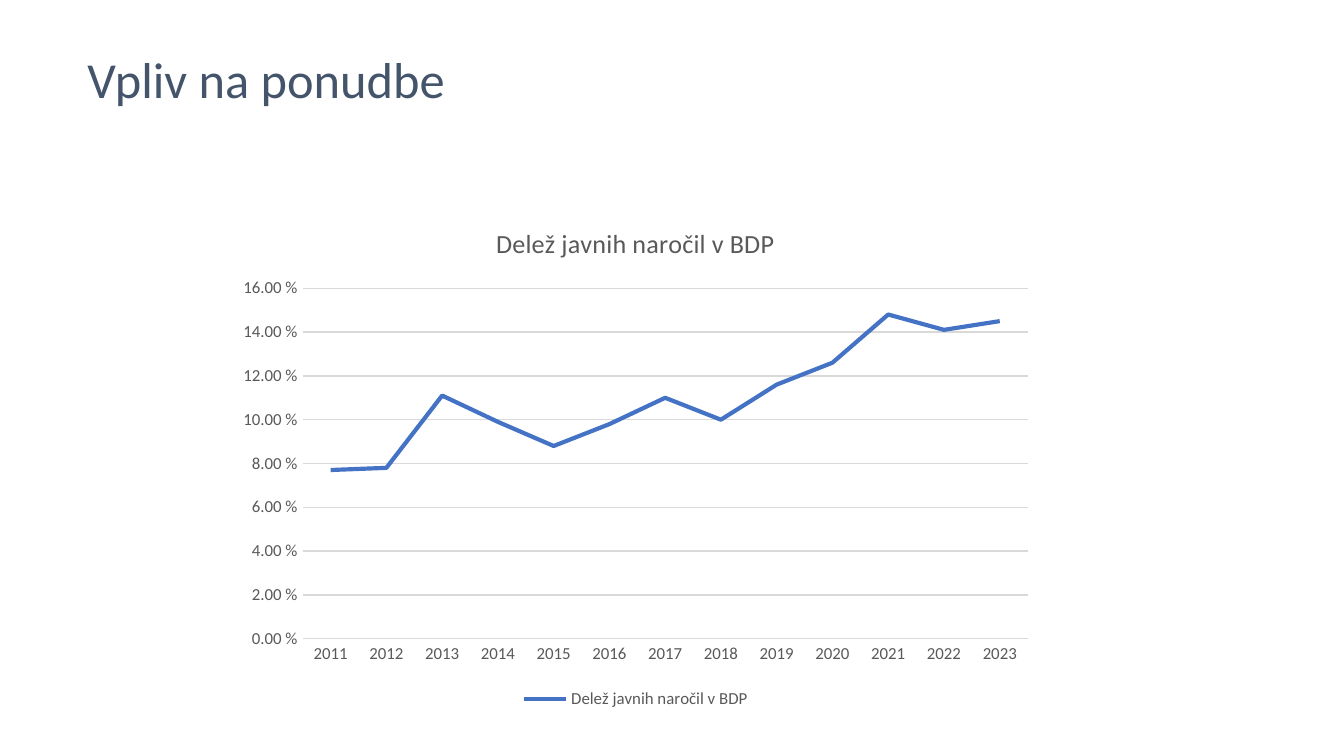
"""Build a slide with a line chart of public procurement as a share of GDP."""
from dataclasses import dataclass

from pptx import Presentation
from pptx.chart.data import CategoryChartData
from pptx.dml.color import RGBColor
from pptx.enum.chart import XL_CHART_TYPE, XL_LEGEND_POSITION, XL_MARKER_STYLE, XL_TICK_MARK
from pptx.enum.text import MSO_ANCHOR, MSO_AUTO_SIZE, PP_ALIGN
from pptx.util import Emu, Pt

LINE_CHART = XL_CHART_TYPE.LINE
LEGEND_BOTTOM = XL_LEGEND_POSITION.BOTTOM
NO_MARKER = XL_MARKER_STYLE.NONE
NO_TICK = XL_TICK_MARK.NONE
MIDDLE = MSO_ANCHOR.MIDDLE
NO_AUTOFIT = MSO_AUTO_SIZE.NONE
LEFT = PP_ALIGN.LEFT

EMU_PER_PX = 914400 / 134.4
TITLE_ONLY_LAYOUT = 5
SERIES_NAME = "Delež javnih naročil v BDP"
YEARS = [str(year) for year in range(2011, 2024)]
SHARES = [0.077, 0.078, 0.111, 0.099, 0.088, 0.098, 0.11,
          0.1, 0.116, 0.126, 0.148, 0.141, 0.145]


@dataclass(frozen=True)
class Theme:
    """Font, colours and point sizes of the slide."""

    font: str = "Calibri"
    background: str = "FFFFFF"
    heading: str = "44546A"
    chart_text: str = "595959"
    grid: str = "D9D9D9"
    series: str = "4472C4"
    heading_size: float = 27
    chart_title_size: float = 14
    label_size: float = 9
    grid_width: float = 0.75
    series_width: float = 2.25


def px(length):
    """Turn a length in px into EMU."""
    return Emu(round(length * EMU_PER_PX))


class SlideBuilder:
    """Hold the theme and the current slide, and add elements to it."""

    def __init__(self, presentation, theme):
        """Start a slide with a plain background."""
        self.theme = theme
        self.slide = presentation.slides.add_slide(presentation.slide_layouts[TITLE_ONLY_LAYOUT])
        fill = self.slide.background.fill
        fill.solid()
        fill.fore_color.rgb = RGBColor.from_string(theme.background)

    def style_font(self, font, size, color):
        """Apply the theme font with a size and a colour."""
        font.name = self.theme.font
        font.size = Pt(size)
        font.bold = False
        font.color.rgb = RGBColor.from_string(color)

    def style_line(self, line, color, width):
        """Apply a colour and a width to a line."""
        line.color.rgb = RGBColor.from_string(color)
        line.width = Pt(width)

    def add_title(self, text, left, top, width, height):
        """Place and fill the title placeholder."""
        shape = self.slide.shapes.title
        shape.left, shape.top = px(left), px(top)
        shape.width, shape.height = px(width), px(height)
        frame = shape.text_frame
        frame.word_wrap = True
        frame.auto_size = NO_AUTOFIT
        frame.vertical_anchor = MIDDLE
        paragraph = frame.paragraphs[0]
        paragraph.alignment = LEFT
        run = paragraph.add_run()
        run.text = text
        self.style_font(run.font, self.theme.heading_size, self.theme.heading)

    def add_line_chart(self, name, categories, values, left, top, width, height):
        """Add a line chart with one series, a title and a legend."""
        theme = self.theme
        data = CategoryChartData(number_format="0.00\\ %")
        data.categories = categories
        data.add_series(name, values)
        chart = self.slide.shapes.add_chart(
            LINE_CHART, px(left), px(top), px(width), px(height), data).chart
        self.style_font(chart.font, theme.label_size, theme.chart_text)
        self.add_chart_title(chart, name)
        self.style_axes(chart)

        chart.has_legend = True
        chart.legend.position = LEGEND_BOTTOM
        chart.legend.include_in_layout = False
        self.style_font(chart.legend.font, theme.label_size, theme.chart_text)

        plot = chart.plots[0]
        plot.vary_by_categories = False
        series = plot.series[0]
        series.smooth = False
        series.marker.style = NO_MARKER
        self.style_line(series.format.line, theme.series, theme.series_width)

    def add_chart_title(self, chart, text):
        """Write the title above the plot."""
        chart.has_title = True
        chart.chart_title.include_in_layout = False
        run = chart.chart_title.text_frame.paragraphs[0].add_run()
        run.text = text
        self.style_font(run.font, self.theme.chart_title_size, self.theme.chart_text)

    def style_axes(self, chart):
        """Style both axes and the horizontal gridlines."""
        theme = self.theme
        for axis in (chart.category_axis, chart.value_axis):
            axis.major_tick_mark = NO_TICK
            axis.minor_tick_mark = NO_TICK
            self.style_font(axis.tick_labels.font, theme.label_size, theme.chart_text)
        self.style_line(chart.category_axis.format.line, theme.grid, theme.grid_width)

        value_axis = chart.value_axis
        value_axis.minimum_scale = 0
        value_axis.maximum_scale = 0.16
        value_axis.major_unit = 0.02
        value_axis.tick_labels.number_format = "0.00\\ %"
        value_axis.tick_labels.number_format_is_linked = False
        value_axis.format.line.fill.background()
        value_axis.has_major_gridlines = True
        self.style_line(value_axis.major_gridlines.format.line, theme.grid, theme.grid_width)


def main():
    """Build and save the presentation."""
    presentation = Presentation()
    presentation.slide_width = px(1344)
    presentation.slide_height = px(756)
    builder = SlideBuilder(presentation, Theme())
    builder.add_line_chart(SERIES_NAME, YEARS, SHARES, 227, 203, 817, 511)
    builder.add_title("Vpliv na ponudbe", 74, 51, 896, 54)
    presentation.save("out.pptx")


if __name__ == "__main__":
    main()
